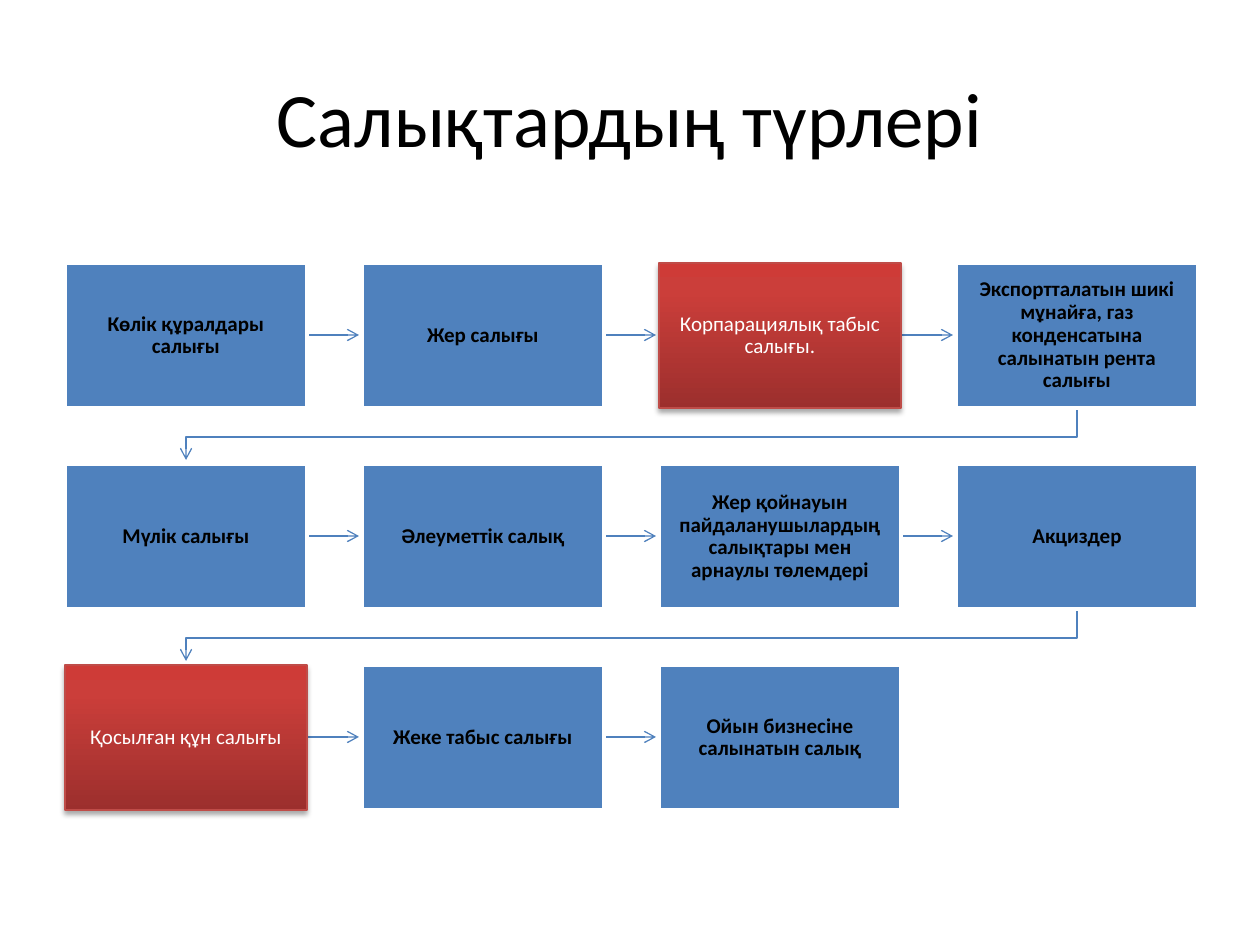
from lxml import etree
from pptx import Presentation
from pptx.dml.color import RGBColor
from pptx.enum.shapes import MSO_CONNECTOR, MSO_SHAPE
from pptx.enum.text import MSO_ANCHOR, PP_ALIGN
from pptx.oxml import parse_xml
from pptx.oxml.ns import qn
from pptx.util import Emu, Pt

RECT = MSO_SHAPE.RECTANGLE
LINE = MSO_CONNECTOR.STRAIGHT
MID = MSO_ANCHOR.MIDDLE
MIDDLE = PP_ALIGN.CENTER

SCALE = 914400 / 126
NS = 'xmlns:a="http://schemas.openxmlformats.org/drawingml/2006/main"'
HEX = {
    "blue": "4F81BD",
    "white": "FFFFFF",
    "black": "000000",
    "edge": "BF4C48",
    "dark": "9C2F2D",
    "red": "CB3E3A",
    "light": "CE3B37",
}
STOPS = [(0, "dark"), (80, "red"), (100, "light")]

LEFT, TOP = 65, 263
WIDE, HIGH = 242, 145
STEP, DROP = 297, 201
REACH, INSET = 52, 11
BEND, FALL = 29, 52

TAXES = [
    ["Көлік құралдары салығы", "Жер салығы", "Корпарациялық табыс салығы.",
     "Экспортталатын шикі мұнайға, газ конденсатына салынатын рента салығы"],
    ["Мүлік салығы", "Әлеуметтік салық",
     "Жер қойнауын пайдаланушылардың салықтары мен арнаулы төлемдері", "Акциздер"],
    ["Қосылған құн салығы", "Жеке табыс салығы", "Ойын бизнесіне салынатын салық"],
]
MARKED = {(0, 2), (2, 0)}


def px(n):
    return Emu(round(n * SCALE))


def rgb(name):
    return RGBColor.from_string(HEX[name])


def write(shape, text, size=12, color="black", bold=False, space=1.0, inset=INSET):
    frame = shape.text_frame
    frame.word_wrap = True
    frame.vertical_anchor = MID
    frame.margin_left = frame.margin_right = px(inset)
    frame.margin_top = frame.margin_bottom = px(inset)
    para = frame.paragraphs[0]
    para.alignment = MIDDLE
    para.line_spacing = space
    run = para.add_run()
    run.text = text
    font = run.font
    font.name, font.size, font.bold = "Calibri", Pt(size), bold
    font.color.rgb = rgb(color)


class Chart:
    def __init__(self, slide):
        self.shapes = slide.shapes

    def title(self, text, x, y, w, h):
        box = self.shapes.add_textbox(px(x), px(y), px(w), px(h))
        write(box, text, size=44)

    def stroke(self, shape, color, width):
        shape.line.color.rgb = rgb(color)
        shape.line.width = Pt(width)

    def tip(self, shape):
        self.stroke(shape, "blue", 0.75)
        line = shape.line._get_or_add_ln()
        etree.SubElement(line, qn("a:tailEnd"), type="arrow")

    def arrow(self, x, y, w):
        link = self.shapes.add_connector(LINE, px(x), px(y), px(x + w), px(y))
        self.tip(link)
        etree.SubElement(link._element.spPr, qn("a:effectLst"))

    def elbow(self, points):
        draft = self.shapes.build_freeform(*points[0], scale=SCALE)
        draft.add_line_segments(points[1:], close=False)
        path = draft.convert_to_shape()
        path.fill.background()
        path.shadow.inherit = False
        self.tip(path)

    def box(self, text, x, y, marked):
        card = self.shapes.add_shape(RECT, px(x), px(y), px(WIDE), px(HIGH))
        card.shadow.inherit = False
        if marked:
            self.stroke(card, "edge", 0.75)
            self.glow(card)
            write(card, text, color="white", space=0.9)
        else:
            card.fill.solid()
            card.fill.fore_color.rgb = rgb("blue")
            self.stroke(card, "white", 2)
            write(card, text, bold=True, space=0.9)

    def glow(self, card):
        stops = "".join(
            f'<a:gs pos="{at * 1000}"><a:srgbClr val="{HEX[name]}"/></a:gs>'
            for at, name in STOPS)
        props = card._element.spPr
        props.find(qn("a:prstGeom")).addnext(parse_xml(
            f'<a:gradFill {NS} rotWithShape="1"><a:gsLst>{stops}</a:gsLst>'
            '<a:lin ang="16200000" scaled="0"/></a:gradFill>'))
        props.find(qn("a:effectLst")).append(parse_xml(
            f'<a:outerShdw {NS} blurRad="{Pt(3.1)}" dist="{Pt(1.8)}" dir="5400000" '
            f'rotWithShape="0"><a:srgbClr val="{HEX["black"]}">'
            '<a:alpha val="35000"/></a:srgbClr></a:outerShdw>'))


def main():
    deck = Presentation()
    deck.slide_width, deck.slide_height = px(1260), px(945)
    chart = Chart(deck.slides.add_slide(deck.slide_layouts[6]))
    chart.title("Салықтардың түрлері", 63, 38, 1134, 158)

    for r, row in enumerate(TAXES):
        y = TOP + r * DROP
        for c, text in enumerate(row):
            x = LEFT + c * STEP
            if c < len(row) - 1:
                chart.arrow(x + WIDE, y + HIGH // 2, REACH)
            elif r < len(TAXES) - 1:
                start, end, base = x + WIDE // 2, LEFT + WIDE // 2, y + HIGH
                chart.elbow([(start, base), (start, base + BEND),
                             (end, base + BEND), (end, base + FALL)])
            chart.box(text, x, y, (r, c) in MARKED)

    deck.save("out.pptx")


if __name__ == "__main__":
    main()
